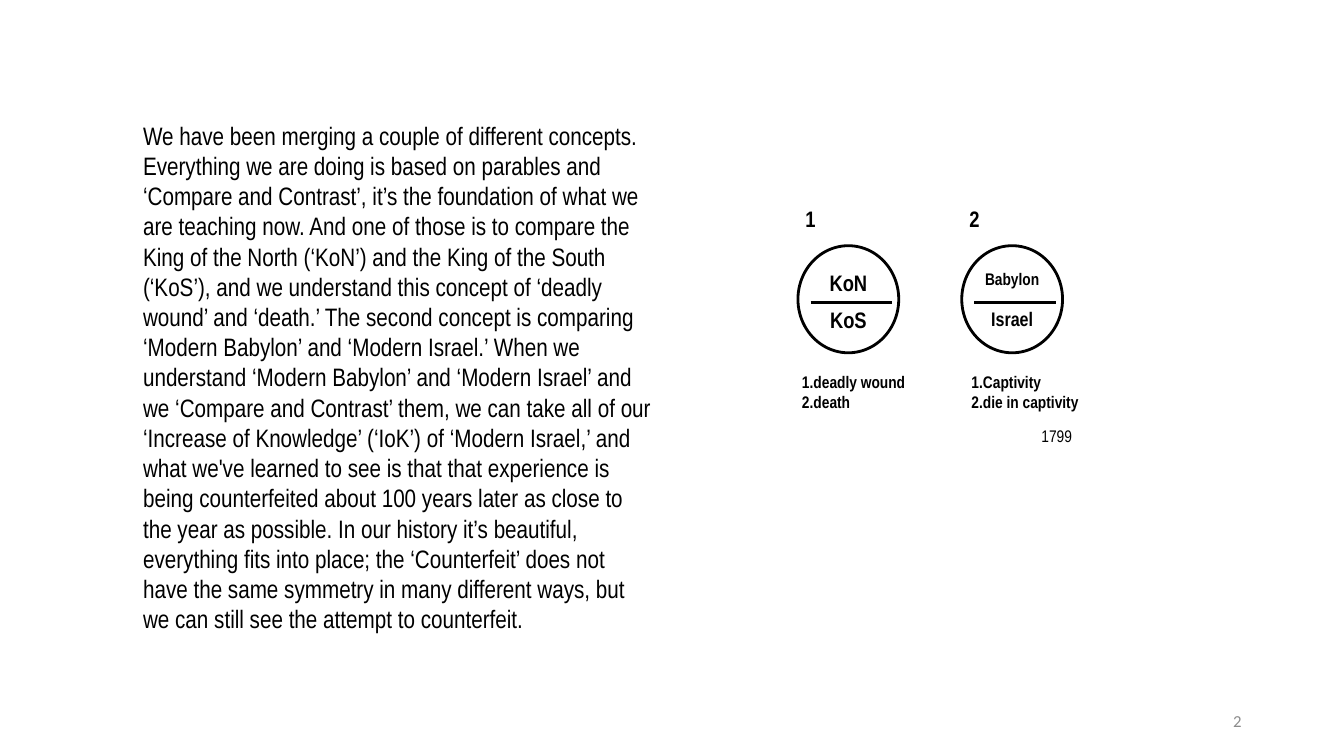
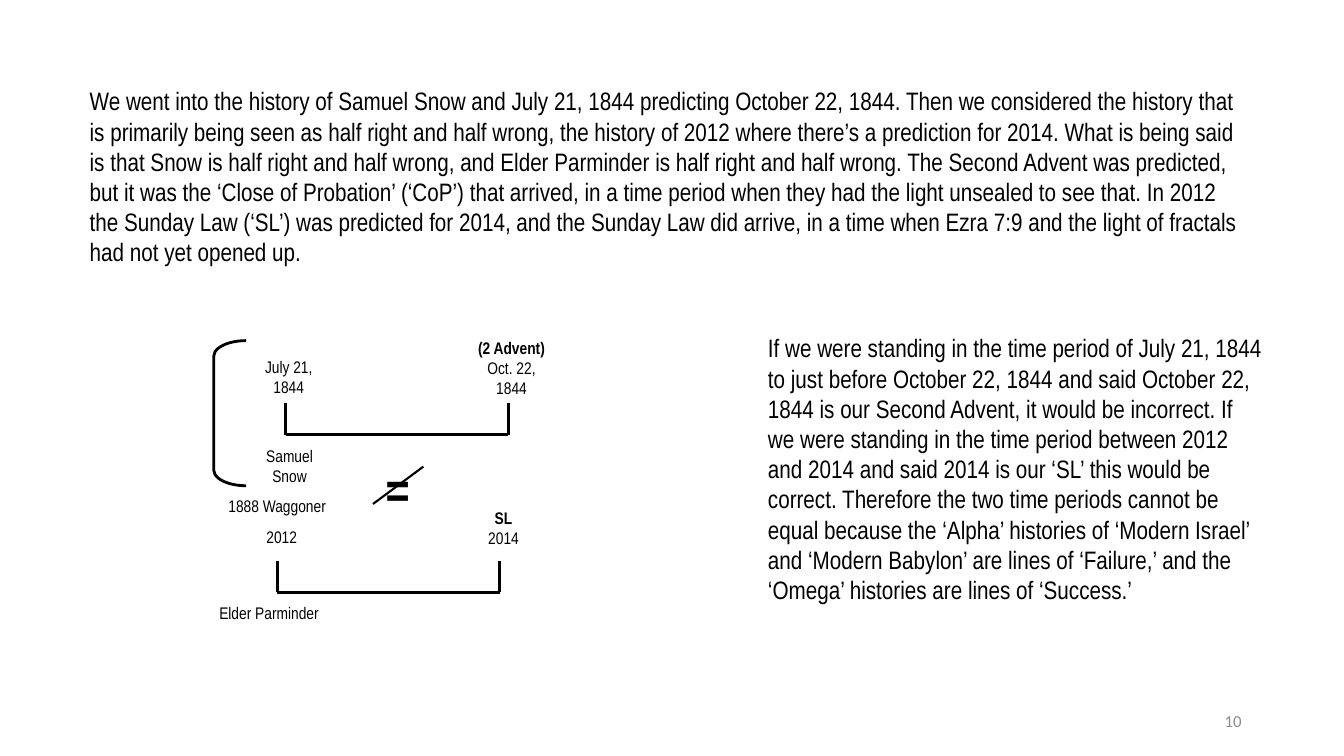
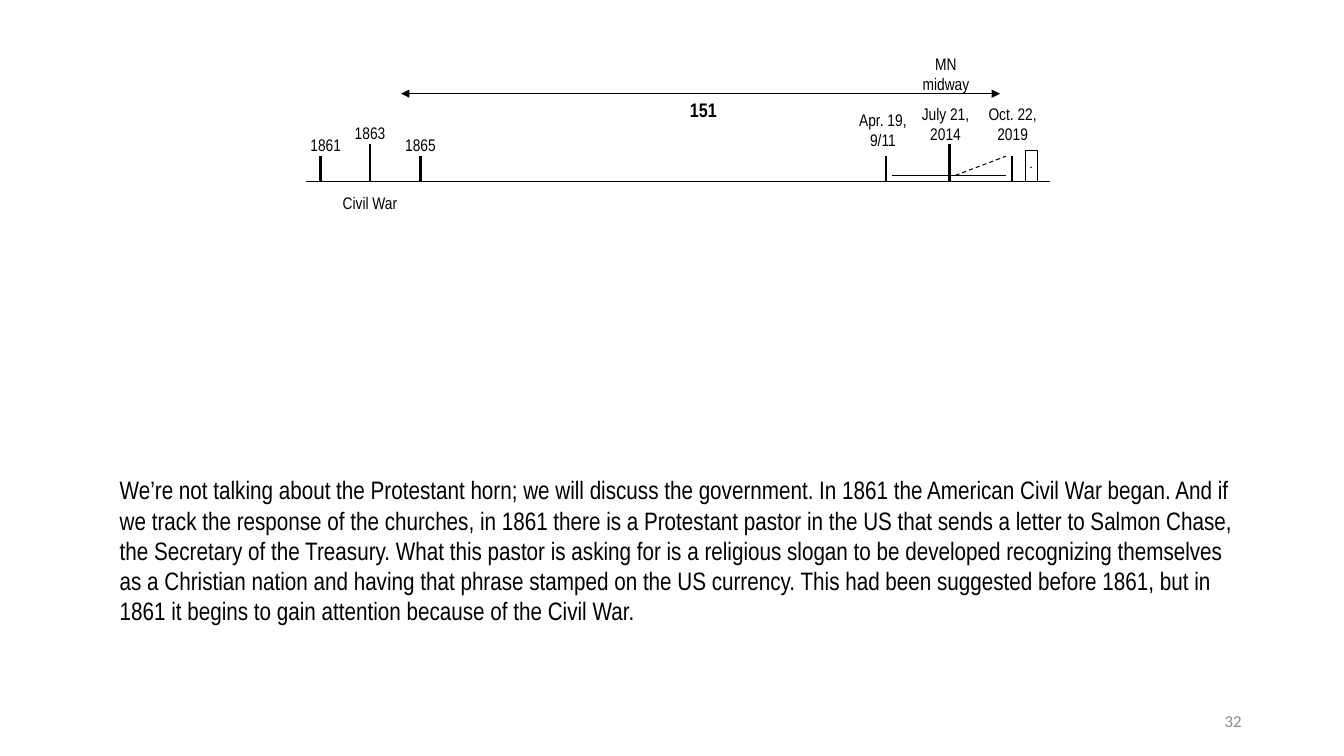
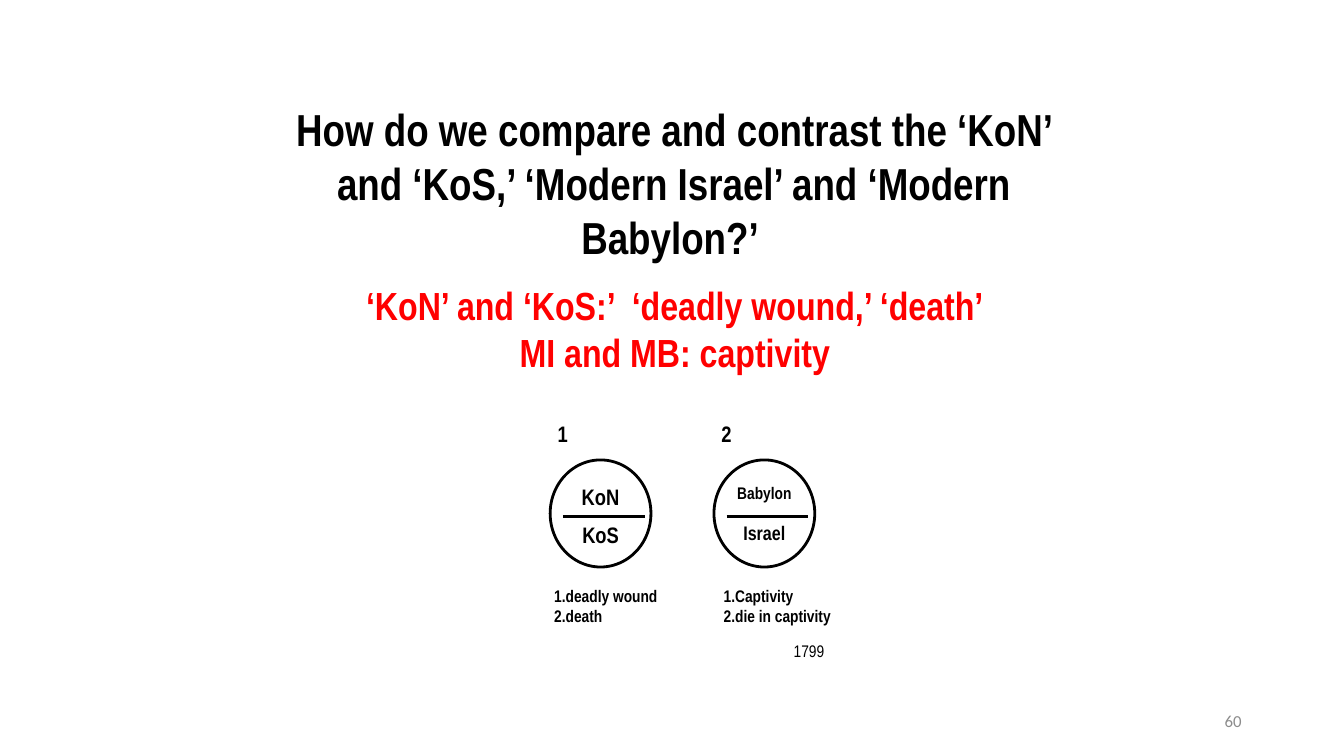
import dataclasses

import pptx
import pptx.dml.color
import pptx.enum.dml
import pptx.enum.shapes
import pptx.enum.text
import pptx.oxml.ns
import pptx.util
from lxml import etree

SHAPE = pptx.enum.shapes.MSO_SHAPE
ALIGN = pptx.enum.text.PP_ALIGN
ANCHOR = pptx.enum.text.MSO_ANCHOR
COLS, ROWS = 64, 36
CELL = pptx.util.Inches(40 / 3) / COLS


@dataclasses.dataclass(frozen=True)
class Theme:
    ink: str = "000000"
    red: str = "FF0000"
    grey: str = "8C8C8C"
    font: str = "Arial Narrow"
    small: int = 12
    note: int = 14
    label: int = 16
    body: int = 18
    answer: int = 28
    title: int = 32
    sign: int = 36
    thin: float = 0.75
    thick: float = 2


T = Theme()

MERGE = " ".join((
    "We have been merging a couple of different concepts. Everything we are doing is based on "
    "parables and ‘Compare and Contrast’, it’s the foundation of what we are teaching now. And one "
    "of those is to compare the King of the North (‘KoN’) and the King of the South (‘KoS’), and we "
    "understand this concept of ‘deadly wound’ and ‘death.’",
    "The second concept is comparing ‘Modern Babylon’ and ‘Modern Israel.’ When we understand "
    "‘Modern Babylon’ and ‘Modern Israel’ and we ‘Compare and Contrast’ them, we can take all of our "
    "‘Increase of Knowledge’ (‘IoK’) of ‘Modern Israel,’ and what we've learned to see is that that "
    "experience is being counterfeited about 100 years later as close to the year as possible.",
    "In our history it’s beautiful, everything fits into place; the ‘Counterfeit’ does not have the "
    "same symmetry in many different ways, but we can still see the attempt to counterfeit.",
))
SNOW = (
    "We went into the history of Samuel Snow and July 21, 1844 predicting October 22, 1844. Then we "
    "considered the history that is primarily being seen as half right and half wrong, the history "
    "of 2012 where there’s a prediction for 2014. What is being said is that Snow is half right and "
    "half wrong, and Elder Parminder is half right and half wrong. The Second Advent was predicted, "
    "but it was the ‘Close of Probation’ (‘CoP’) that arrived, in a time period when they had the "
    "light unsealed to see that. In 2012 the Sunday Law (‘SL’) was predicted for 2014, and the "
    "Sunday Law did arrive, in a time when Ezra 7:9 and the light of fractals had not yet opened up."
)
STAND = (
    "If we were standing in the time period of July 21, 1844 to just before October 22, 1844 and "
    "said October 22, 1844 is our Second Advent, it would be incorrect. If we were standing in the "
    "time period between 2012 and 2014 and said 2014 is our ‘SL’ this would be correct. Therefore "
    "the two time periods cannot be equal because the ‘Alpha’ histories of ‘Modern Israel’ and "
    "‘Modern Babylon’ are lines of ‘Failure,’ and the ‘Omega’ histories are lines of ‘Success.’"
)
HORN = (
    "We’re not talking about the Protestant horn; we will discuss the government. In 1861 the "
    "American Civil War began. And if we track the response of the churches, in 1861 there is a "
    "Protestant pastor in the US that sends a letter to Salmon Chase, the Secretary of the Treasury. "
    "What this pastor is asking for is a religious slogan to be developed recognizing themselves as "
    "a Christian nation and having that phrase stamped on the US currency. This had been suggested "
    "before 1861, but in 1861 it begins to gain attention because of the Civil War."
)


def grid(*cells):
    return [round(cell * CELL) for cell in cells]


def tint(code):
    return pptx.dml.color.RGBColor.from_string(code)


def write(frame, lines, size, bold=False, color=T.ink, align=ALIGN.LEFT, font=T.font,
          inset=0.04, anchor=ANCHOR.TOP):
    frame.word_wrap = True
    frame.vertical_anchor = anchor
    if inset is not None:
        frame.margin_left = frame.margin_right = pptx.util.Inches(inset)
        frame.margin_top = frame.margin_bottom = pptx.util.Inches(inset)
    frame.text = lines
    for par in frame.paragraphs:
        par.alignment = align
        par.font.name = font
        par.font.size = pptx.util.Pt(size)
        par.font.bold = bold
        par.font.color.rgb = tint(color)


def text(slide, spot, lines, size=T.small, **style):
    box = slide.shapes.add_textbox(*grid(*spot))
    write(box.text_frame, lines, size, **style)
    return box.text_frame


def label(slide, spot, lines, size=T.small, **style):
    return text(slide, spot, lines, size, align=ALIGN.CENTER, **style)


def prose(slide, spot, lines):
    text(slide, spot, lines, T.body, inset=None)


def count(frame):
    for par in frame.paragraphs:
        props = par._p.get_or_add_pPr()
        props.set("marL", "0")
        props.set("indent", str(-pptx.util.Inches(0.2)))
        mark = pptx.oxml.ns.qn("a:buAutoNum")
        props.insert_element_before(props.makeelement(mark, {"type": "arabicPeriod"}),
                                    "a:tabLst", "a:defRPr", "a:extLst")


def line(slide, start, end, width=T.thick, dash=False, arrows=False):
    rule = slide.shapes.add_connector(
        pptx.enum.shapes.MSO_CONNECTOR.STRAIGHT, *grid(*start, *end))
    rule.line.color.rgb = tint(T.ink)
    rule.line.width = pptx.util.Pt(width)
    if dash:
        rule.line.dash_style = pptx.enum.dml.MSO_LINE.DASH
    if arrows:
        for tag in ("a:headEnd", "a:tailEnd"):
            tip = etree.SubElement(rule.line._get_or_add_ln(), pptx.oxml.ns.qn(tag))
            tip.set("type", "triangle")
    etree.SubElement(rule._element.spPr, pptx.oxml.ns.qn("a:effectLst"))


def shape(slide, kind, spot, width=T.thick):
    item = slide.shapes.add_shape(kind, *grid(*spot))
    item.shadow.inherit = False
    item.fill.background()
    item.line.color.rgb = tint(T.ink)
    item.line.width = pptx.util.Pt(width)
    return item


def page(deck, number, layout=6):
    slide = deck.slides.add_slide(deck.slide_layouts[layout])
    text(slide, (45.2, 33.36, 14.4, 1.92), str(number), color=T.grey, font="Calibri",
         align=ALIGN.RIGHT, anchor=ANCHOR.MIDDLE, inset=0.1)
    return slide


def pair(slide, left, top):
    sides = (
        ("KoN", T.label, "KoS", T.label, "deadly wound\ndeath", 0.6),
        ("Babylon", T.small, "Israel", T.note, "Captivity\ndie in captivity", 0.87),
    )
    for index, (upper, big, lower, low, facts, shift) in enumerate(sides):
        x = left + 7.8 * index
        shape(slide, SHAPE.OVAL, (x + 0.6, top + 2.1, 4.8, 5.1))
        line(slide, (x + 1.2, top + 4.8), (x + 5.1, top + 4.8))
        label(slide, (x + 1.5, top + 3, 3, 1.7), upper, big, bold=True)
        label(slide, (x + 1.5, top + 4.8, 3, 1.7), lower, low, bold=True)
        label(slide, (x, top, 2.4, 1.7), str(index + 1), T.label, bold=True)
        count(text(slide, (x + shift, top + 7.9, 6.3, 2.5), facts, bold=True))
    text(slide, (left + 12, top + 10.5, 3, 1.8), "1799")


def span(slide, left, top):
    right, base = left + 10.6, top + 1.5
    line(slide, (left, base), (right, base))
    for x in (left, right):
        line(slide, (x, top), (x, base))


def merge(deck):
    slide = page(deck, 2)
    prose(slide, (6.34, 5.47, 25.25, 25.2), MERGE)
    pair(slide, 37.4, 9.6)


def snow(deck):
    slide = page(deck, 10)
    prose(slide, (3.8, 3.84, 56.25, 9.2), SNOW)
    prose(slide, (36.1, 15.6, 24.6, 13.6), STAND)
    span(slide, 13.6, 19.2)
    span(slide, 13.2, 26.7)
    curve = shape(slide, SHAPE.LEFT_BRACKET, (10.18, 16.22, 1.54, 6.91))
    curve.adjustments[0] = 0.48
    for spot, words in (
        ((12.05, 16.8, 3.4, 2.4), "July 21, 1844"),
        ((11.7, 21.02, 4.18, 2.4), "Samuel Snow"),
        ((9.41, 23.42, 7.58, 1.5), "1888 Waggoner"),
        ((11.71, 24.91, 3.41, 1.8), "2012"),
        ((9.02, 28.51, 7.58, 1.5), "Elder Parminder"),
    ):
        label(slide, spot, words)
    for spot, words in (
        ((22.27, 15.89, 4.18, 3.3), "(2 Advent)\nOct. 22, 1844"),
        ((21.89, 24, 4.18, 2.7), "SL\n2014"),
    ):
        label(slide, spot, words).paragraphs[0].font.bold = True
    label(slide, (17.14, 21.6, 3.6, 3), "=", T.sign, bold=True)
    line(slide, (17.76, 24), (20.16, 22.22), 1.5)


def horn(deck):
    slide = page(deck, 32)
    prose(slide, (5.23, 22.37, 54.67, 7.8), HORN)
    base, short, tall = 8.64, 1.2, 1.8
    line(slide, (14.59, base), (50.02, base), T.thin)
    for x, rise in ((15.26, short), (17.62, tall), (20.02, short),
                    (42.19, short), (45.22, tall), (48.19, short)):
        line(slide, (x, base), (x, base - rise))
    line(slide, (19.1, 4.46), (47.62, 4.46), T.thin, arrows=True)
    line(slide, (42.48, 8.35), (47.9, 8.35), T.thin)
    line(slide, (45.5, 8.35), (47.9, 7.44), T.thin, dash=True)
    for x, y, year in ((14.59, 6.24, "1861"), (16.7, 5.66, "1863"), (19.1, 6.24, "1865")):
        text(slide, (x, y, 2.4, 1.2), year)
    for spot, words in (
        ((15.22, 8.98, 4.8, 2.1), "Civil War"),
        ((40.7, 5.04, 2.69, 2.4), "Apr. 19,\n9/11"),
        ((43.68, 4.75, 2.69, 2.4), "July 21,\n2014"),
        ((43.39, 2.35, 3.31, 2.4), "MN\nmidway"),
        ((46.42, 4.75, 3.6, 2.4), "Oct. 22,\n2019"),
    ):
        label(slide, spot, words)
    label(slide, (29.9, 4.46, 7.2, 1.5), "151", T.note, bold=True)
    door = shape(slide, SHAPE.RECTANGLE, (48.82, 7.15, 0.58, 1.5), 0.25)
    write(door.text_frame, ".", 10, font="Times New Roman")


def quiz(deck):
    slide = page(deck, 60, layout=5)
    title = slide.shapes.title
    title.left, title.top, title.width, title.height = grid(11.86, 4.61, 40.5, 5.66)
    title.text_frame.auto_size = pptx.enum.text.MSO_AUTO_SIZE.NONE
    write(title.text_frame,
          "How do we compare and contrast the ‘KoN’ and ‘KoS,’ ‘Modern Israel’ and "
          "‘Modern Babylon?’ ",
          T.title, bold=True, align=ALIGN.CENTER, inset=None)
    label(slide, (16.13, 13.15, 32, 5),
          "‘KoN’ and ‘KoS:’  ‘deadly wound,’ ‘death’\nMI and MB: captivity",
          T.answer, bold=True, color=T.red, inset=None)
    pair(slide, 25.6, 19.8)


def main():
    deck = pptx.Presentation()
    deck.slide_width, deck.slide_height = grid(COLS, ROWS)
    for build in (merge, snow, horn, quiz):
        build(deck)
    deck.save("out.pptx")


if __name__ == "__main__":
    main()
